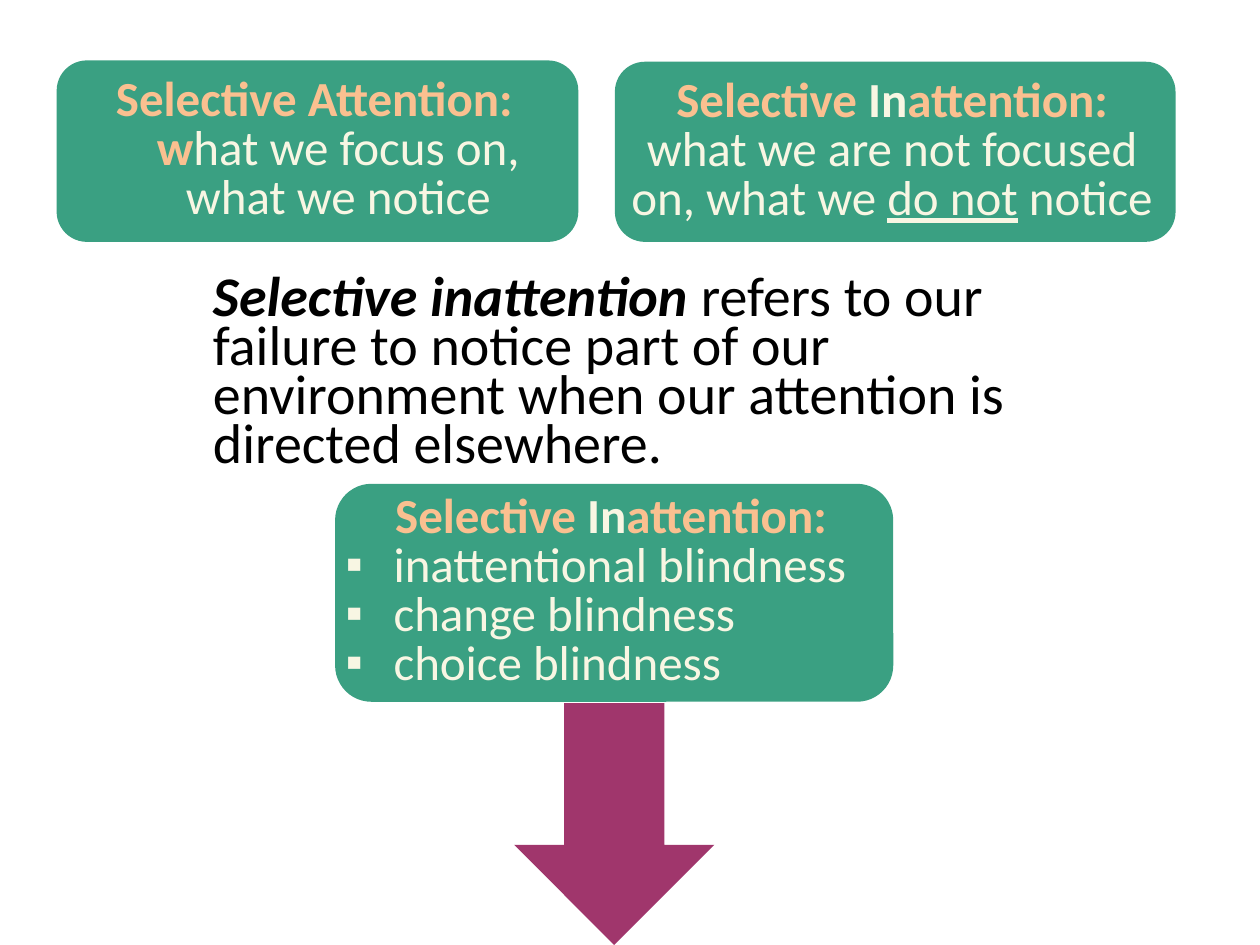
from dataclasses import dataclass

from lxml.etree import SubElement
from pptx import Presentation
from pptx.dml.color import RGBColor
from pptx.enum.shapes import MSO_SHAPE as Shape
from pptx.enum.text import MSO_ANCHOR as Anchor, MSO_AUTO_SIZE as AutoSize, PP_ALIGN as Align
from pptx.oxml.ns import qn
from pptx.util import Inches, Pt


@dataclass(frozen=True)
class Theme:
    font: str = "Calibri"
    box: str = "3AA082"
    arrow: str = "A0366C"
    accent: str = "FAC090"
    light: str = "F8F6E3"
    dark: str = "000000"
    definition_size: int = 32
    box_size: int = 28
    line_spacing: int = 28
    hang: float = 0.38


class Builder:
    """Holds the theme and the slide being filled."""

    def __init__(self, theme, slide):
        self.theme = theme
        self.slide = slide

    def add_runs(self, paragraph, runs, size):
        """Each run is (text, colour, styles), styles being letters of 'biu'."""
        paragraph.line_spacing = Pt(self.theme.line_spacing)
        for text, color, styles in runs:
            run = paragraph.add_run()
            run.text = text
            font = run.font
            font.name, font.size = self.theme.font, Pt(size)
            font.color.rgb = RGBColor.from_string(color)
            font.bold, font.italic = "b" in styles, "i" in styles
            font.underline = "u" in styles

    def indent(self, paragraph, left, first, bullet=None):
        props = paragraph._p.get_or_add_pPr()
        props.set("marL", str(Inches(left)))
        props.set("indent", str(Inches(first)))
        if bullet:
            SubElement(props, qn("a:buFont")).set("typeface", "Arial")
            SubElement(props, qn("a:buChar")).set("char", bullet)
        else:
            SubElement(props, qn("a:buNone"))

    def definition(self, left, top, width, height, runs):
        body = self.slide.placeholders[1]
        body.left, body.top = Inches(left), Inches(top)
        body.width, body.height = Inches(width), Inches(height)
        frame = body.text_frame
        frame.auto_size = AutoSize.NONE
        paragraph = frame.paragraphs[0]
        self.add_runs(paragraph, runs, self.theme.definition_size)
        self.indent(paragraph, 0, 0)

    def shape(self, kind, left, top, width, height, color):
        shape = self.slide.shapes.add_shape(
            kind, Inches(left), Inches(top), Inches(width), Inches(height))
        shape.shadow.inherit = False
        shape.fill.solid()
        shape.fill.fore_color.rgb = RGBColor.from_string(color)
        shape.line.fill.background()
        return shape

    def concept_box(self, left, top, width, height, heading, detail=None, bullets=()):
        theme = self.theme
        box = self.shape(Shape.ROUNDED_RECTANGLE, left, top, width, height, theme.box)
        frame = box.text_frame
        frame.word_wrap = True
        frame.vertical_anchor = Anchor.MIDDLE
        frame.margin_left = 0
        frame.margin_top = frame.margin_right = frame.margin_bottom = Inches(0.05)

        title = frame.paragraphs[0]
        title.alignment = Align.CENTER
        self.add_runs(title, heading, theme.box_size)
        self.indent(title, theme.hang, -theme.hang)
        if detail:
            explanation = frame.add_paragraph()
            explanation.alignment = Align.CENTER
            explanation.level = 1
            self.add_runs(explanation, detail, theme.box_size)
            self.indent(explanation, 0, 0)
        for text in bullets:
            item = frame.add_paragraph()
            item.alignment = Align.LEFT
            self.add_runs(item, [(text, theme.light, "")], theme.box_size)
            self.indent(item, theme.hang, -theme.hang, "▪")


def main():
    theme = Theme()
    deck = Presentation()
    deck.slide_width, deck.slide_height = Inches(10), Inches(7.5)
    slide = deck.slides.add_slide(deck.slide_layouts[1])
    heading = slide.shapes.title._element
    heading.getparent().remove(heading)
    builder = Builder(theme, slide)

    # Definition in the middle
    builder.definition(1.59, 2.16, 7.08, 1.69, [
        ("Selective inattention ", theme.dark, "bi"),
        ("refers to our failure to notice part of our environment "
         "when our attention is directed elsewhere.", theme.dark, ""),
    ])

    # Kinds of inattention, with the arrow leading on
    inattention = [
        ("Selective ", theme.accent, "b"),
        ("In", theme.light, "b"),
        ("attention:", theme.accent, "b"),
    ]
    builder.concept_box(2.66, 3.84, 4.43, 1.73, inattention, bullets=(
        "inattentional blindness", "change blindness", "choice blindness"))
    builder.shape(Shape.DOWN_ARROW, 4.08, 5.58, 1.59, 1.92, theme.arrow)

    # The two contrasted concepts at the top
    builder.concept_box(4.88, 0.49, 4.45, 1.43, inattention, detail=[
        ("what we are not focused on, what we ", theme.light, ""),
        ("do not", theme.light, "u"),
        (" notice", theme.light, ""),
    ])
    builder.concept_box(0.45, 0.48, 4.14, 1.44, [
        ("Selective Attention: w", theme.accent, "b"),
        ("hat we focus on, what we notice", theme.light, ""),
    ])

    deck.save("out.pptx")


if __name__ == "__main__":
    main()
